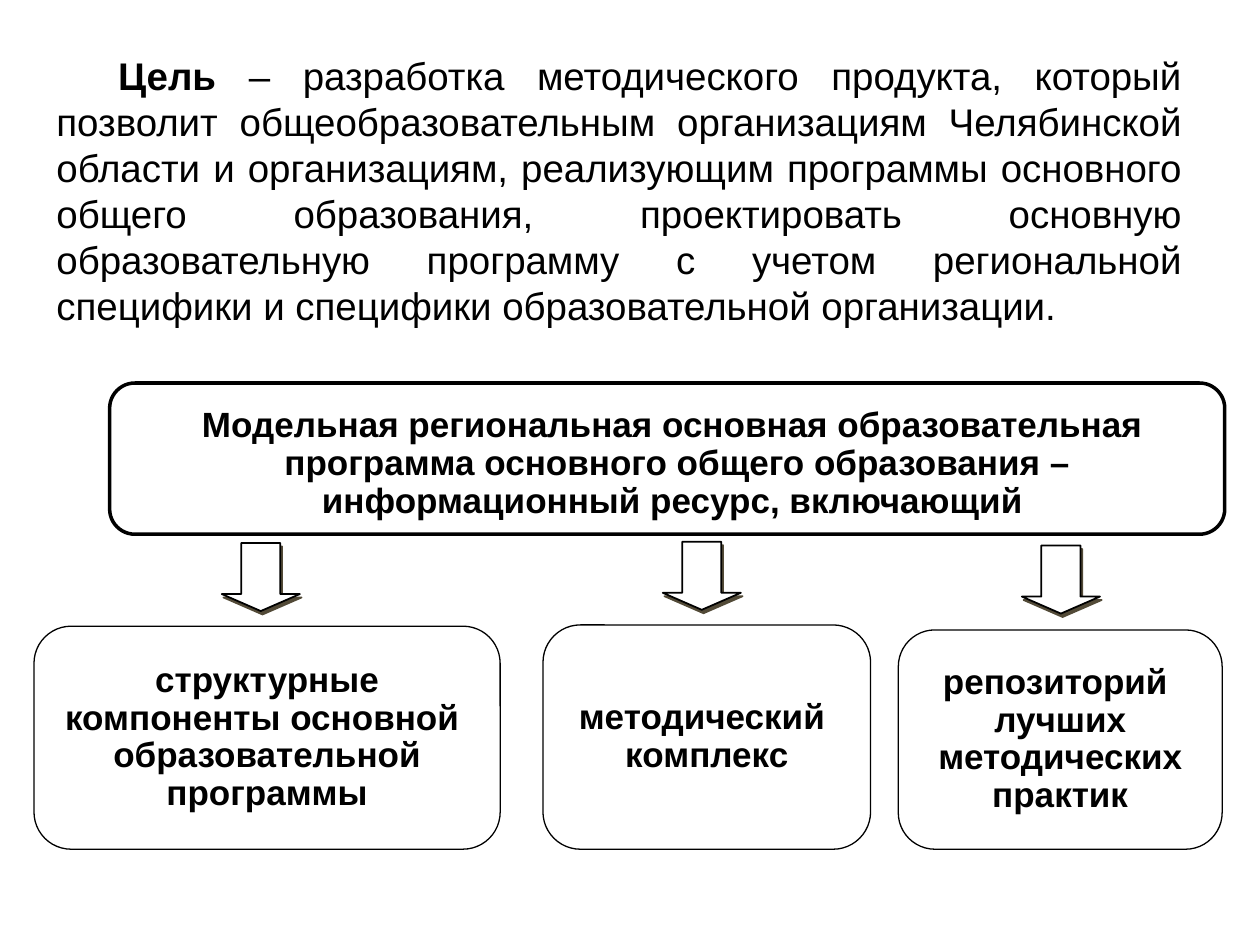
import pptx
import pptx.util
import pptx.dml.color
import pptx.enum.shapes
import pptx.enum.text
import pptx.oxml

SHAPE = pptx.enum.shapes.MSO_SHAPE
ALIGN = pptx.enum.text.PP_ALIGN
ANCHOR = pptx.enum.text.MSO_ANCHOR
DRAWING_NS = "http://schemas.openxmlformats.org/drawingml/2006/main"
COLUMNS, ROWS = 100, 75

THEME = {
    "ink": "000000",
    "paper": "FFFFFF",
    "shadow": "524A37",
    "font": "Arial",
    "goal_size": 22,
    "label_size": 20,
}


def apply(target, values):
    for key, value in values.items():
        setattr(target, key, value)


class SlideBuilder:
    """Draws styled elements on one slide, placed by grid columns and rows."""

    def __init__(self, theme):
        self.theme = theme
        self.deck = pptx.Presentation()
        apply(self.deck, {
            "slide_width": pptx.util.Inches(10),
            "slide_height": pptx.util.Inches(7.5),
        })
        self.slide = self.deck.slides.add_slide(self.deck.slide_layouts[6])

    def color(self, role):
        return pptx.dml.color.RGBColor.from_string(self.theme[role])

    def place(self, left, top, width, height):
        column = self.deck.slide_width / COLUMNS
        row = self.deck.slide_height / ROWS
        return [round(n) for n in (left * column, top * row, width * column, height * row)]

    def add_run(self, paragraph, text, size, bold):
        run = paragraph.add_run()
        run.text = text
        apply(run.font, {
            "name": self.theme["font"],
            "size": pptx.util.Pt(self.theme[size]),
            "bold": bold,
        })
        run.font.color.rgb = self.color("ink")

    def outline(self, kind, area, line_width):
        shape = self.slide.shapes.add_shape(kind, *self.place(*area))
        shape.shadow.inherit = False
        shape.fill.solid()
        shape.fill.fore_color.rgb = self.color("paper")
        shape.line.color.rgb = self.color("ink")
        shape.line.width = pptx.util.Pt(line_width)
        return shape

    def box(self, kind, area, lines, line_width, inset, anchor, indent=0, spacings=(0.9, 0.9)):
        shape = self.outline(kind, area, line_width)
        margin = pptx.util.Inches(inset)
        sides = ("left", "top", "right", "bottom")
        apply(shape.text_frame, {f"margin_{side}": margin for side in sides})
        apply(shape.text_frame, {"word_wrap": True, "vertical_anchor": anchor})
        for index, (text, spacing) in enumerate(zip(lines, spacings)):
            frame = shape.text_frame
            paragraph = frame.add_paragraph() if index else frame.paragraphs[0]
            apply(paragraph, {"alignment": ALIGN.CENTER, "line_spacing": spacing})
            if indent:
                paragraph._p.get_or_add_pPr().set("marL", str(pptx.util.Inches(indent)))
            self.add_run(paragraph, text, "label_size", True)

    def arrow(self, left, top):
        shape = self.outline(SHAPE.DOWN_ARROW, (left, top, 6.2, 5.4), 1)
        shape.adjustments[0], shape.adjustments[1] = 0.5, 0.25
        effects = shape._element.spPr.find(f"{{{DRAWING_NS}}}effectLst")
        effects.append(pptx.oxml.parse_xml(
            f'<a:outerShdw xmlns:a="{DRAWING_NS}" blurRad="0" dist="{pptx.util.Pt(2.2)}" '
            f'dir="{63 * 60000}" algn="ctr" rotWithShape="0">'
            f'<a:srgbClr val="{self.theme["shadow"]}"/></a:outerShdw>'
        ))

    def goal(self, area, heading, body):
        frame = self.slide.shapes.add_textbox(*self.place(*area)).text_frame
        apply(frame, {
            "word_wrap": True,
            "auto_size": pptx.enum.text.MSO_AUTO_SIZE.SHAPE_TO_FIT_TEXT,
        })
        paragraph = frame.paragraphs[0]
        paragraph.alignment = ALIGN.JUSTIFY
        paragraph._p.get_or_add_pPr().set("indent", str(pptx.util.Inches(0.49)))
        self.add_run(paragraph, heading, "goal_size", True)
        self.add_run(paragraph, body, "goal_size", False)


def main():
    builder = SlideBuilder(THEME)
    builder.goal(
        (3.5, 3.6, 91.3, 23.2),
        "Цель ",
        "– разработка методического продукта, который позволит общеобразовательным "
        "организациям Челябинской области и организациям, реализующим программы "
        "основного общего образования, проектировать основную образовательную "
        "программу с учетом региональной специфики и специфики образовательной "
        "организации.",
    )
    builder.box(
        SHAPE.FLOWCHART_ALTERNATE_PROCESS,
        (8.7, 30.4, 88.5, 12),
        (
            "Модельная региональная основная образовательная ",
            "программа основного общего образования – информационный ресурс, включающий ",
        ),
        2, 0.1, ANCHOR.TOP, indent=0.16, spacings=(1.0, 0.9),
    )
    parts = (
        ((2.7, 49.7, 37, 17.7), (17.6, 43.1),
         ("структурные компоненты основной ", "образовательной программы")),
        ((43.1, 49.6, 26, 17.8), (52.6, 43),
         ("методический ", "комплекс")),
        ((71.3, 50, 25.7, 17.4), (81.1, 43.3),
         ("репозиторий ", "лучших методических практик")),
    )
    for area, arrow_corner, lines in parts:
        builder.arrow(*arrow_corner)
        builder.box(SHAPE.ROUNDED_RECTANGLE, area, lines, 0.75, 0.03, ANCHOR.MIDDLE)
    builder.deck.save("out.pptx")


if __name__ == "__main__":
    main()
